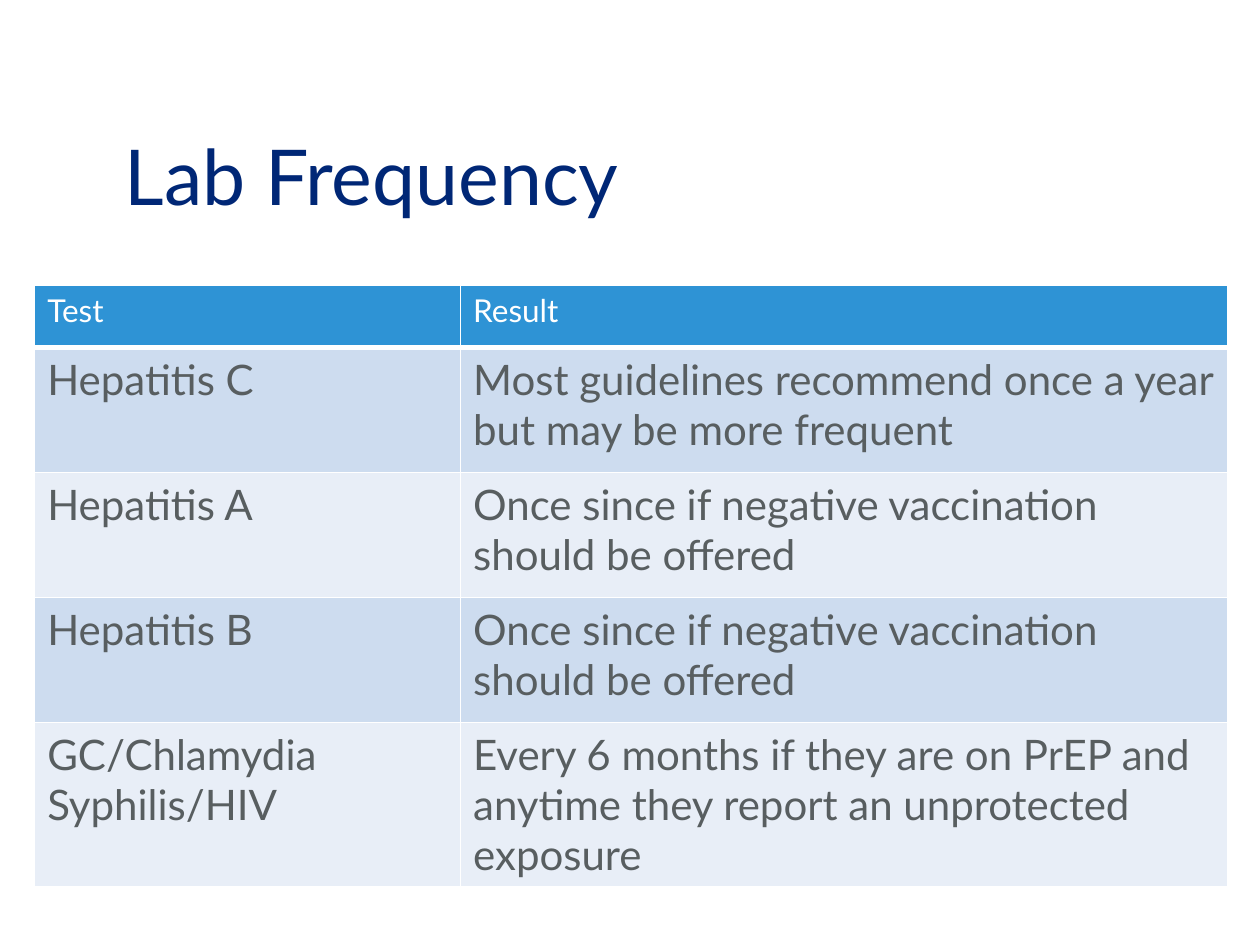
"""Build the lab frequency slide."""
from dataclasses import dataclass

import pptx
import pptx.dml.color
import pptx.enum.text
import pptx.oxml
import pptx.oxml.ns
import pptx.util

Pt = pptx.util.Pt
FONT = "Lato"
NAVY, BLUE, WHITE, GRAY = "002776", "2E93D5", "FFFFFF", "585E60"
BANDS = ("CDDCEF", "E8EEF7")


@dataclass(frozen=True)
class LabRow:
    test: str
    result: str
    height: float
    size: float = 24
    color: str = GRAY


ROWS = (
    LabRow("Test", "Result", 35.5, 18, WHITE),
    LabRow("Hepatitis C", "Most guidelines recommend once a year but may be more frequent", 71.4),
    LabRow("Hepatitis A", "Once since if negative vaccination should be offered", 71.4),
    LabRow("Hepatitis B", "Once since if negative vaccination should be offered", 71.4),
    LabRow(
        "GC/Chlamydia\nSyphilis/HIV",
        "Every 6 months if they are on PrEP and anytime they report an unprotected exposure",
        93,
    ),
)


def rgb(value: str) -> pptx.dml.color.RGBColor:
    return pptx.dml.color.RGBColor.from_string(value)


def write(frame, text: str, *, size: float, color: str) -> None:
    frame.text = text
    for para in frame.paragraphs:
        para.alignment = pptx.enum.text.PP_ALIGN.LEFT
        for span in para.runs:
            span.font.name = FONT
            span.font.size = Pt(size)
            span.font.bold = False
            span.font.color.rgb = rgb(color)


def add_borders(cell, *, bottom: float) -> None:
    properties = cell._tc.get_or_add_tcPr()
    widths = {"lnL": 1, "lnR": 1, "lnT": 1, "lnB": bottom}
    for side, width in widths.items():
        properties.append(pptx.oxml.parse_xml(
            f'<a:{side} {pptx.oxml.ns.nsdecls("a")} w="{int(Pt(width))}">'
            f'<a:solidFill><a:srgbClr val="{WHITE}"/></a:solidFill></a:{side}>'
        ))


def add_title(page, text: str) -> None:
    title = page.shapes.title
    title.left, title.top, title.width, title.height = Pt(64), Pt(54.7), Pt(593), Pt(90)
    title.text_frame.vertical_anchor = pptx.enum.text.MSO_ANCHOR.MIDDLE
    write(title.text_frame, text, size=44, color=NAVY)


def add_lab_table(page, rows: tuple[LabRow, ...]) -> None:
    widths = (243.4, 438.4)
    height = sum(row.height for row in rows)
    table = page.shapes.add_table(
        len(rows), len(widths), Pt(19.8), Pt(163.2), Pt(sum(widths)), Pt(height)
    ).table
    for column, width in zip(table.columns, widths):
        column.width = Pt(width)
    for index, row in enumerate(rows):
        table.rows[index].height = Pt(row.height)
        is_header = index == 0
        for column, text in enumerate((row.test, row.result)):
            cell = table.cell(index, column)
            write(cell.text_frame, text, size=row.size, color=row.color)
            add_borders(cell, bottom=3 if is_header else 1)
            cell.fill.solid()
            cell.fill.fore_color.rgb = rgb(BLUE if is_header else BANDS[(index - 1) % 2])


def main() -> None:
    deck = pptx.Presentation()
    deck.slide_width, deck.slide_height = Pt(720), Pt(540)
    page = deck.slides.add_slide(deck.slide_layouts.get_by_name("Title Only"))
    page.background.fill.solid()
    page.background.fill.fore_color.rgb = rgb(WHITE)
    add_title(page, "Lab Frequency")
    add_lab_table(page, ROWS)
    deck.save("out.pptx")


if __name__ == "__main__":
    main()
